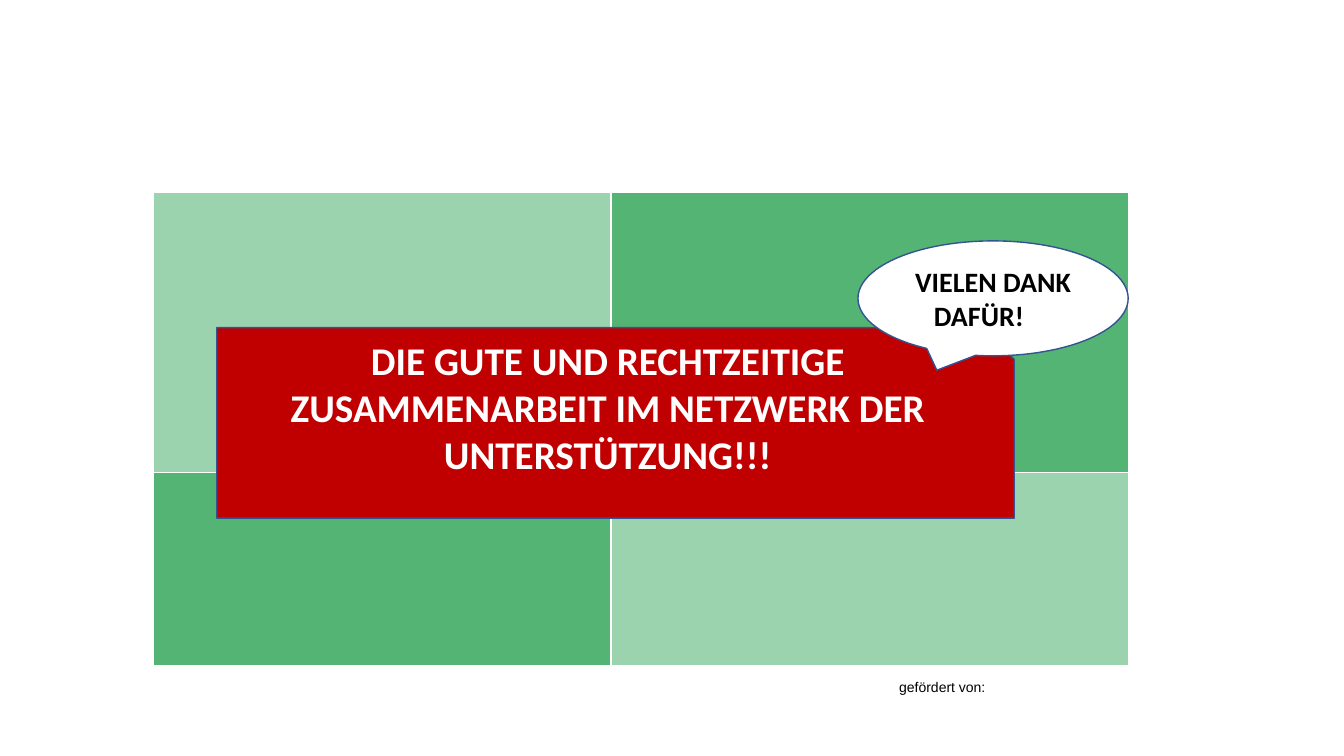
from lxml import etree
from pptx import Presentation
from pptx.dml.color import RGBColor
from pptx.enum.shapes import MSO_SHAPE
from pptx.enum.text import MSO_ANCHOR, PP_ALIGN
from pptx.oxml.ns import qn
from pptx.util import Inches, Pt

SNIPPED = MSO_SHAPE.SNIP_1_RECTANGLE
BUBBLE = MSO_SHAPE.OVAL_CALLOUT
MIDDLE = MSO_ANCHOR.MIDDLE
CENTER = PP_ALIGN.CENTER
BLANK_LAYOUT = 6

LIGHT_GREEN = RGBColor(0x9B, 0xD3, 0xAE)
GREEN = RGBColor(0x54, 0xB4, 0x74)
RED = RGBColor(0xC0, 0x00, 0x00)
OUTLINE = RGBColor(0x32, 0x54, 0x91)
WHITE = RGBColor(0xFF, 0xFF, 0xFF)
BLACK = RGBColor(0x00, 0x00, 0x00)

BANNER_FONT = {"name": "Calibri", "size": Pt(28), "bold": True}
THANKS_FONT = {"name": "Calibri", "size": Pt(20), "bold": True}
FUNDING_FONT = {"name": "Arial", "size": Pt(10)}


def write(paragraph, text, font_format, color):
    paragraph.text = text
    for attribute, value in font_format.items():
        setattr(paragraph.font, attribute, value)
    paragraph.font.color.rgb = color


def border_cell(cell, color, width):
    properties = cell._tc.get_or_add_tcPr()
    for position, side in enumerate(("a:lnL", "a:lnR", "a:lnT", "a:lnB")):
        line = etree.Element(qn(side), w=str(width))
        fill = etree.SubElement(line, qn("a:solidFill"))
        etree.SubElement(fill, qn("a:srgbClr"), val=str(color))
        properties.insert(position, line)


def add_quadrants(slide, left, top, widths, heights):
    """Checkerboard table of two greens."""
    quadrants = slide.shapes.add_table(
        len(heights), len(widths), Inches(left), Inches(top),
        Inches(sum(widths)), Inches(sum(heights))).table
    for column, width in zip(quadrants.columns, widths):
        column.width = Inches(width)
    for row, height in zip(quadrants.rows, heights):
        row.height = Inches(height)
    for r in range(len(heights)):
        for c in range(len(widths)):
            cell = quadrants.cell(r, c)
            cell.fill.solid()
            cell.fill.fore_color.rgb = GREEN if (r + c) % 2 else LIGHT_GREEN
            border_cell(cell, WHITE, Pt(1))


def add_panel(slide, preset, box, fill):
    """Outlined shape with centred text; returns its text frame."""
    panel = slide.shapes.add_shape(preset, *map(Inches, box))
    panel.shadow.inherit = False
    panel.fill.solid()
    panel.fill.fore_color.rgb = fill
    panel.line.color.rgb = OUTLINE
    panel.line.width = Pt(1)
    frame = panel.text_frame
    frame.word_wrap = True
    frame.vertical_anchor = MIDDLE
    return frame


def add_banner(slide, *box):
    message = add_panel(slide, SNIPPED, box, RED)
    # The deeper bottom inset lifts the message above the middle
    message.margin_bottom = Inches(0.52)
    paragraph = message.paragraphs[0]
    paragraph.alignment = CENTER
    write(paragraph,
          "DIE GUTE UND RECHTZEITIGE ZUSAMMENARBEIT IM NETZWERK DER UNTERSTÜTZUNG!!!",
          BANNER_FONT, WHITE)


def add_thanks(slide, *box):
    thanks = add_panel(slide, BUBBLE, box, WHITE)
    # The second line sits left of centre by half its right margin
    for row, (text, right_margin) in enumerate((("VIELEN DANK", 0), ("DAFÜR!", 0.28))):
        paragraph = thanks.add_paragraph() if row else thanks.paragraphs[0]
        paragraph.alignment = CENTER
        paragraph._p.get_or_add_pPr().set("marR", str(Inches(right_margin)))
        write(paragraph, text, THANKS_FONT, BLACK)


def add_funding_note(slide, *box):
    note = slide.shapes.add_textbox(*map(Inches, box)).text_frame
    note.word_wrap = True
    write(note.paragraphs[0], "gefördert von:", FUNDING_FONT, BLACK)


def main():
    deck = Presentation()
    deck.slide_width, deck.slide_height = Inches(13.33), Inches(7.5)
    slide = deck.slides.add_slide(deck.slide_layouts[BLANK_LAYOUT])
    add_funding_note(slide, 8.82, 6.68, 2.12, 0.27)
    add_quadrants(slide, 1.52, 1.91, widths=(4.54, 5.13), heights=(2.78, 1.91))
    add_banner(slide, 2.15, 3.25, 7.91, 1.89)
    add_thanks(slide, 8.51, 2.39, 2.68, 1.14)
    deck.save("out.pptx")


if __name__ == "__main__":
    main()
